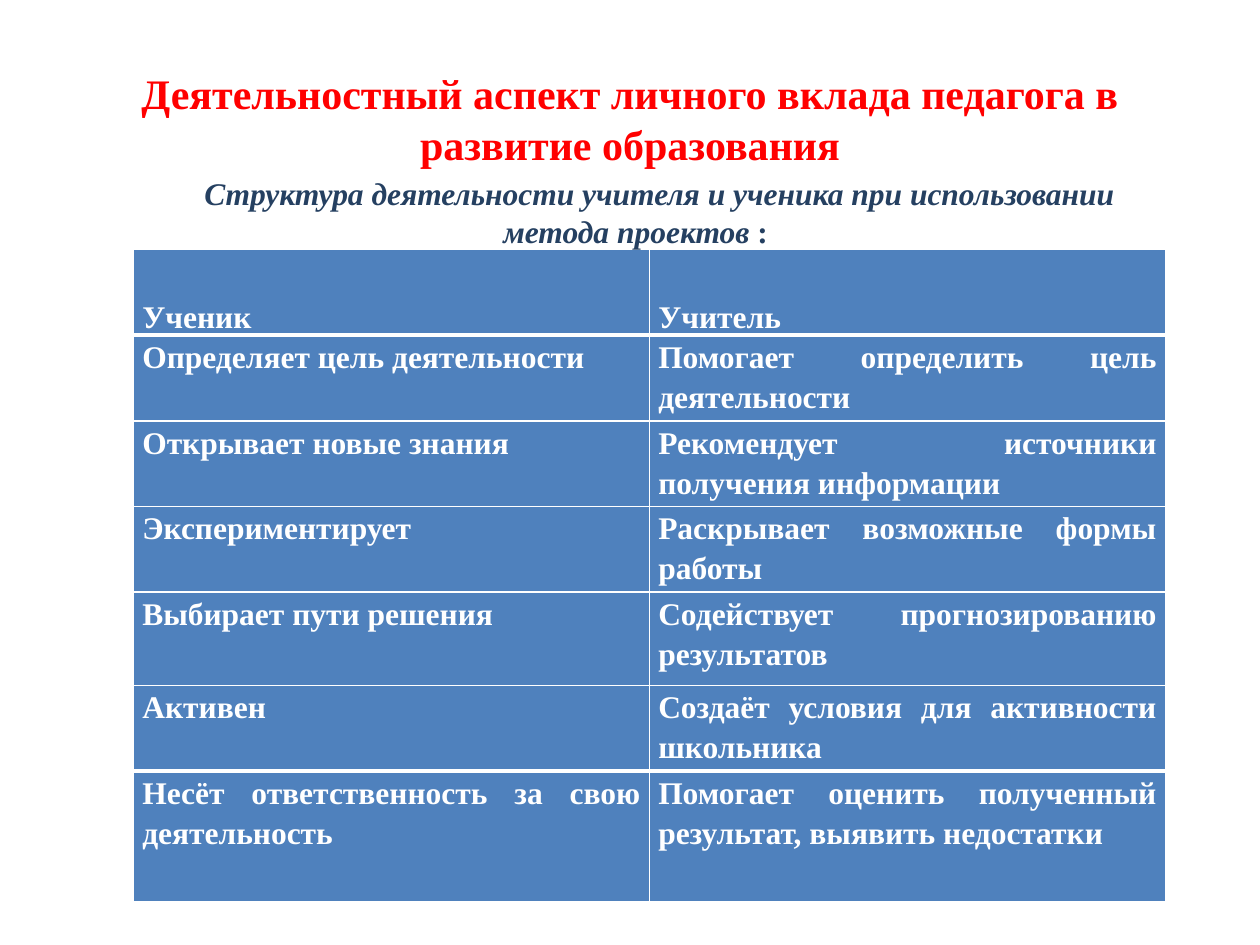
from lxml import etree
from pptx import Presentation
from pptx.dml.color import RGBColor
from pptx.enum.text import MSO_ANCHOR, MSO_AUTO_SIZE, PP_ALIGN
from pptx.oxml.ns import qn
from pptx.util import Inches, Pt

CENTER, JUSTIFY = PP_ALIGN.CENTER, PP_ALIGN.JUSTIFY
MIDDLE, TOP, BOTTOM = MSO_ANCHOR.MIDDLE, MSO_ANCHOR.TOP, MSO_ANCHOR.BOTTOM
NO_FIT = MSO_AUTO_SIZE.NONE
COLORS = {"title": "FF0000", "subtitle": "254061", "cell": "4F81BD", "white": "FFFFFF"}
ROLES = [
    ("Ученик", "Учитель"),
    ("Определяет цель деятельности", "Помогает определить цель деятельности"),
    ("Открывает новые знания", "Рекомендует источники получения информации"),
    ("Экспериментирует", "Раскрывает возможные формы работы"),
    ("Выбирает пути решения", "Содействует прогнозированию результатов"),
    ("Активен", "Создаёт условия для активности школьника"),
    ("Несёт ответственность за свою деятельность",
     "Помогает оценить полученный результат, выявить недостатки"),
]
ROW_HEIGHTS = [0.68, 0.68, 0.68, 0.68, 0.74, 0.68, 1.04]
HEAVY_LINES = (1, len(ROLES) - 1)


def apply(target, values):
    for name, value in values.items():
        setattr(target, name, value)


class ProjectSlide:
    font_name = "Times New Roman"

    def __init__(self, presentation):
        self.width, self.height = presentation.slide_width, presentation.slide_height
        self.slide = presentation.slides.add_slide(presentation.slide_layouts[6])

    def place(self, left, top, width, height):
        return (round(left * self.width), round(top * self.height),
                round(width * self.width), round(height * self.height))

    def add_text(self, paragraph, text, size, color, italic=False):
        run = paragraph.add_run()
        run.text = text
        apply(run.font, {"name": self.font_name, "size": Pt(size), "bold": True,
                         "italic": italic})
        run.font.color.rgb = RGBColor.from_string(COLORS[color])

    def heading(self, area, parts, size, color, indent=0):
        frame = self.slide.shapes.add_textbox(*self.place(*area)).text_frame
        apply(frame, {"word_wrap": True, "auto_size": NO_FIT, "vertical_anchor": MIDDLE})
        paragraph = frame.paragraphs[0]
        paragraph.alignment = CENTER
        paragraph._p.get_or_add_pPr().set("indent", str(Inches(indent)))
        for text, italic in parts:
            self.add_text(paragraph, text, size, color, italic)

    def borders(self, cell, widths):
        properties = cell._tc.get_or_add_tcPr()
        for side, width in zip("LRTB", widths):
            line = etree.SubElement(properties, qn(f"a:ln{side}"), w=str(Pt(width)))
            fill = etree.SubElement(line, qn("a:solidFill"))
            etree.SubElement(fill, qn("a:srgbClr"), val=COLORS["white"])

    def cell(self, cell, text, row):
        self.borders(cell, [1, 1] + [3 if edge in HEAVY_LINES else 1
                                     for edge in (row, row + 1)])
        cell.fill.solid()
        cell.fill.fore_color.rgb = RGBColor.from_string(COLORS["cell"])
        apply(cell, {"margin_left": Inches(0.07), "margin_right": Inches(0.07),
                     "margin_top": 0, "margin_bottom": 0,
                     "vertical_anchor": TOP if row else BOTTOM})
        paragraph = cell.text_frame.paragraphs[0]
        apply(paragraph, {"alignment": JUSTIFY, "line_spacing": 1.15})
        self.add_text(paragraph, text, 18, "white")

    def table(self, area, rows, heights):
        table = self.slide.shapes.add_table(
            len(rows), len(rows[0]), *self.place(*area)).table
        for row, (texts, height) in enumerate(zip(rows, heights)):
            table.rows[row].height = Inches(height)
            for column, text in enumerate(texts):
                self.cell(table.cell(row, column), text, row)


def main():
    presentation = Presentation()
    apply(presentation, {"slide_width": Inches(10), "slide_height": Inches(7.5)})
    page = ProjectSlide(presentation)
    page.heading((0.05, 0.04, 0.9, 0.17),
                 [("Деятельностный аспект личного вклада педагога в развитие образования",
                   False)], 24, "title")
    page.table((0.106, 0.264, 0.819, 0.69), ROLES, ROW_HEIGHTS)
    page.heading((0.083, 0.177, 0.843, 0.095),
                 [("Структура деятельности учителя и ученика при использовании "
                   "метода проектов", True), (" :", False)], 18, "subtitle", 0.38)
    presentation.save("out.pptx")


if __name__ == "__main__":
    main()
